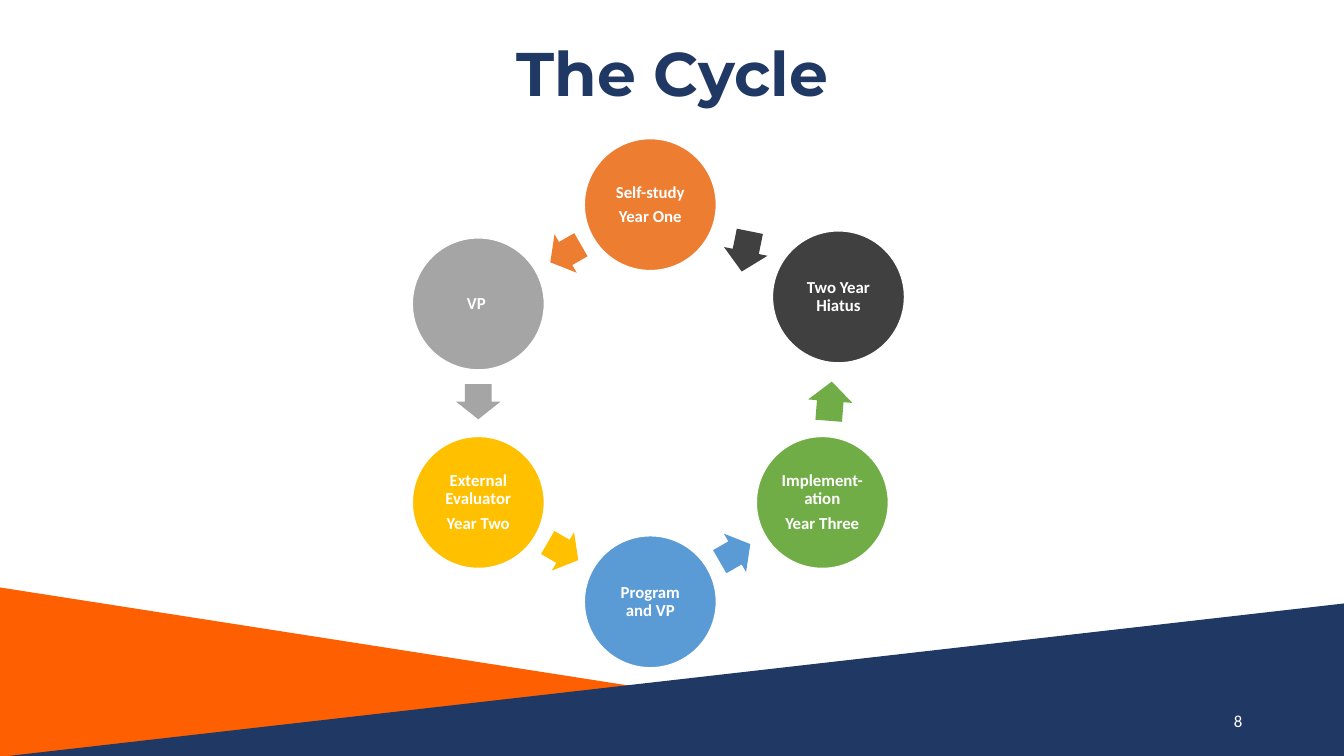
from dataclasses import dataclass
from math import atan2, cos, degrees, hypot, radians, sin

from pptx import Presentation
from pptx.dml.color import RGBColor
from pptx.enum.shapes import MSO_SHAPE
from pptx.enum.text import MSO_ANCHOR, PP_ALIGN
from pptx.util import Inches, Pt

OVAL = MSO_SHAPE.OVAL
ARROW = MSO_SHAPE.RIGHT_ARROW
WEDGE = MSO_SHAPE.ISOSCELES_TRIANGLE
MIDDLE = MSO_ANCHOR.MIDDLE
CENTER, RIGHT = PP_ALIGN.CENTER, PP_ALIGN.RIGHT

COLORS = {
    "navy": "203864", "flame": "FE5F00", "white": "FFFFFF",
    "orange": "ED7D31", "gray": "A5A5A5", "gold": "FFC000",
    "blue": "5B9BD5", "green": "70AD47", "dark": "404040",
}
MID_X, MID_Y, RADIUS = 6.45, 4.0, 1.97
SIZE = 1.31
BREADTH = 0.44
GAP_SHARE = 0.53
BACK = 0.015


@dataclass
class Stage:
    lines: list[str]
    color: str
    dx: float = 0
    dy: float = 0
    turn: float | None = None


STAGES = [
    Stage(["Self-study", "Year One"], "orange"),
    Stage(["VP "], "gray"),
    Stage(["External Evaluator", "Year Two"], "gold"),
    Stage(["Program and VP"], "blue"),
    Stage(["Implement-ation", "Year Three"], "green"),
    Stage(["Two Year Hiatus"], "dark", dx=0.16, dy=-0.07, turn=101.4),
]


def rgb(name: str) -> RGBColor:
    return RGBColor.from_string(COLORS[name])


def write(shape, lines: list[str], *, size: float = 12, font: str = "Calibri",
          color: str = "white", bold: bool = False, align=CENTER,
          spacing: float = 1.0, after: float = 0, inset: float | None = None) -> None:
    frame = shape.text_frame
    frame.word_wrap = True
    frame.vertical_anchor = MIDDLE
    if inset is not None:
        frame.margin_left = frame.margin_right = Inches(inset)
        frame.margin_top = frame.margin_bottom = Inches(inset)
    for i, line in enumerate(lines):
        para = frame.add_paragraph() if i else frame.paragraphs[0]
        para.alignment = align
        para.line_spacing = spacing
        para.space_after = Pt(after)
        run = para.add_run()
        run.text = line
        run.font.size = Pt(size)
        run.font.name = font
        run.font.bold = bold
        run.font.color.rgb = rgb(color)


def draw(slide, kind, x: float, y: float, w: float, h: float, color: str):
    shape = slide.shapes.add_shape(kind, Inches(x), Inches(y), Inches(w), Inches(h))
    shape.shadow.inherit = False
    shape.fill.solid()
    shape.fill.fore_color.rgb = rgb(color)
    shape.line.fill.background()
    return shape


def label(slide, x: float, y: float, w: float, h: float, text: str, **style) -> None:
    box = slide.shapes.add_textbox(Inches(x), Inches(y), Inches(w), Inches(h))
    write(box, [text], **style)


def center(index: int) -> tuple[float, float]:
    stage = STAGES[index]
    angle = radians(-90 - index * 360 / len(STAGES))
    return (MID_X + RADIUS * cos(angle) + stage.dx,
            MID_Y + RADIUS * sin(angle) + stage.dy)


def circle(slide, index: int) -> None:
    stage = STAGES[index]
    x, y = center(index)
    disc = draw(slide, OVAL, x - SIZE / 2, y - SIZE / 2, SIZE, SIZE, stage.color)
    disc.line.color.rgb = rgb("white")
    disc.line.width = Pt(1)
    write(disc, stage.lines, bold=True, spacing=0.9, after=4.2, inset=0.02)


def arrow(slide, index: int) -> None:
    stage = STAGES[index]
    x1, y1 = center(index)
    x2, y2 = center((index + 1) % len(STAGES))
    span = hypot(x2 - x1, y2 - y1)
    length = (span - SIZE) * GAP_SHARE
    share = 0.5 - BACK / span
    x, y = x1 + (x2 - x1) * share, y1 + (y2 - y1) * share
    shape = draw(slide, ARROW, x - length / 2, y - BREADTH / 2,
                 length, BREADTH, stage.color)
    shape.adjustments[0] = 0.6
    shape.adjustments[1] = 0.5
    heading = degrees(atan2(y2 - y1, x2 - x1)) % 360
    shape.rotation = heading if stage.turn is None else stage.turn


def main() -> None:
    deck = Presentation()
    deck.slide_width, deck.slide_height = Inches(13.33), Inches(7.5)
    slide = deck.slides.add_slide(deck.slide_layouts[6])

    draw(slide, WEDGE, -0.05, 5.82, 10.77, 1.68, "flame").adjustments[0] = 0
    draw(slide, WEDGE, 0.08, 5.98, 13.31, 1.52, "navy").adjustments[0] = 1
    label(slide, 0.92, 0.03, 11.5, 1.45, "The Cycle", size=44,
          font="Montserrat", color="navy", bold=True, spacing=0.9)
    label(slide, 9.42, 6.95, 3, 0.4, "8", align=RIGHT)

    for index in range(len(STAGES)):
        circle(slide, index)
        arrow(slide, index)
    deck.save("out.pptx")


if __name__ == "__main__":
    main()
